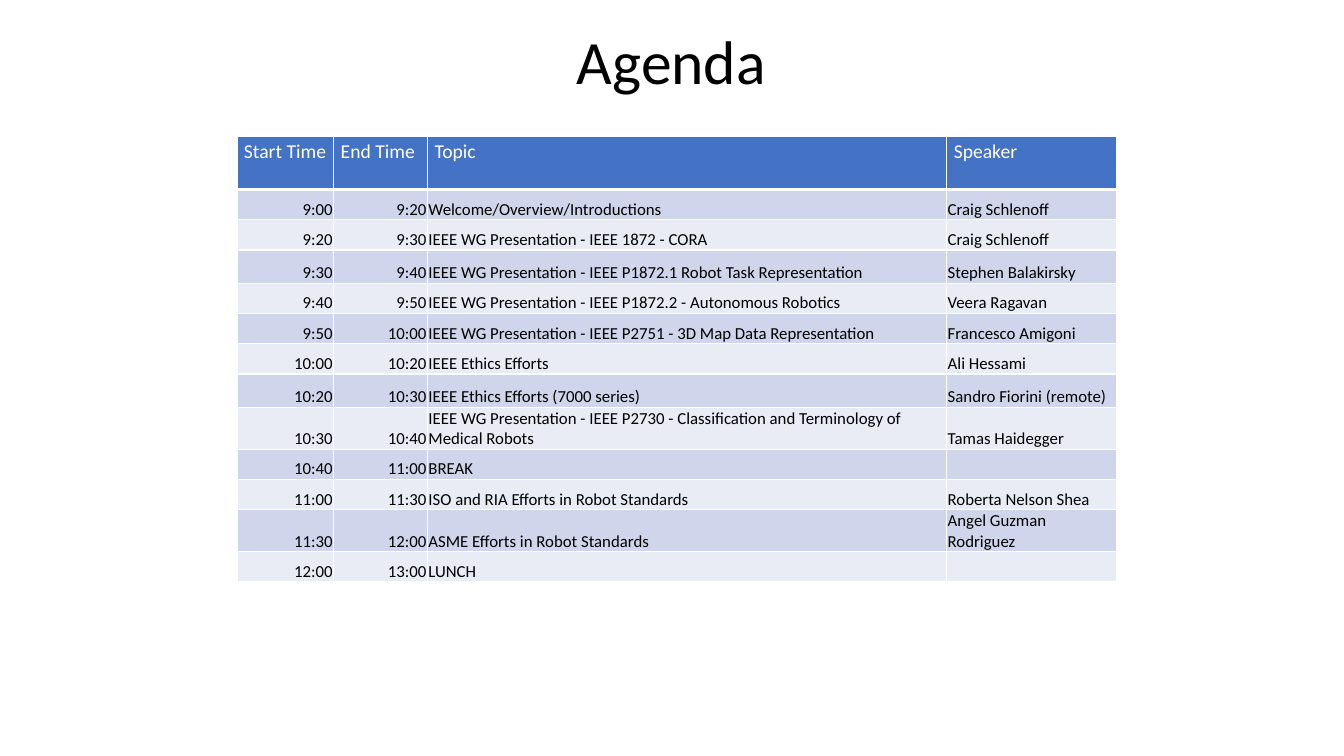
import pptx
import pptx.util
import pptx.oxml
import pptx.dml.color
import pptx.enum.text

Inches = pptx.util.Inches
Pt = pptx.util.Pt
RGBColor = pptx.dml.color.RGBColor
Align = pptx.enum.text.PP_ALIGN
Anchor = pptx.enum.text.MSO_ANCHOR

BLACK = RGBColor(0x00, 0x00, 0x00)
WHITE = RGBColor(0xFF, 0xFF, 0xFF)
BLUE = RGBColor(0x44, 0x72, 0xC4)
DARK = RGBColor(0xCF, 0xD5, 0xEA)
LIGHT = RGBColor(0xE9, 0xEB, 0xF5)
FONT = "Calibri"
NS = "http://schemas.openxmlformats.org/drawingml/2006/main"

# Columns, then each row with its height
WIDTHS = [0.96, 0.93, 5.15, 1.68]
ROWS = [
    (0.53, "Start Time", "End Time", "Topic", "Speaker"),
    (0.3, "9:00", "9:20", "Welcome/Overview/Introductions", "Craig Schlenoff"),
    (0.3, "9:20", "9:30", "IEEE WG Presentation - IEEE 1872 - CORA",
     "Craig Schlenoff"),
    (0.33, "9:30", "9:40",
     "IEEE WG Presentation - IEEE P1872.1 Robot Task Representation",
     "Stephen Balakirsky"),
    (0.3, "9:40", "9:50",
     "IEEE WG Presentation - IEEE P1872.2 - Autonomous Robotics",
     "Veera Ragavan"),
    (0.3, "9:50", "10:00",
     "IEEE WG Presentation - IEEE P2751 - 3D Map Data Representation",
     "Francesco Amigoni"),
    (0.3, "10:00", "10:20", "IEEE Ethics Efforts", "Ali Hessami"),
    (0.33, "10:20", "10:30", "IEEE Ethics Efforts (7000 series)",
     "Sandro Fiorini (remote)"),
    (0.41, "10:30", "10:40",
     "IEEE WG Presentation - IEEE P2730 - Classification and Terminology "
     "of Medical Robots", "Tamas Haidegger"),
    (0.3, "10:40", "11:00", "BREAK", ""),
    (0.3, "11:00", "11:30", "ISO and RIA Efforts in Robot Standards",
     "Roberta Nelson Shea"),
    (0.41, "11:30", "12:00", "ASME Efforts in Robot Standards",
     "Angel Guzman Rodriguez"),
    (0.3, "12:00", "13:00", "LUNCH", ""),
]


def style(para, size, color, align):
    para.alignment = align
    para.font.name = FONT
    para.font.size = Pt(size)
    para.font.color.rgb = color


def border(cell, base):
    props = cell._tc.get_or_add_tcPr()
    for side, width in (("L", 1), ("R", 1), ("T", 1), ("B", base)):
        props.append(pptx.oxml.parse_xml(
            f'<a:ln{side} xmlns:a="{NS}" w="{Pt(width)}"><a:solidFill>'
            f'<a:srgbClr val="{WHITE}"/></a:solidFill></a:ln{side}>'))


deck = pptx.Presentation()
deck.slide_width = Inches(13.33)
deck.slide_height = Inches(7.5)
slide = deck.slides.add_slide(deck.slide_layouts[5])

# Title
title = slide.shapes.title
title.left, title.top = Inches(2.35), Inches(0.29)
title.width, title.height = Inches(8.62), Inches(0.7)
title.text_frame.text = "Agenda"
title.text_frame.vertical_anchor = Anchor.MIDDLE
head = title.text_frame.paragraphs[0]
head.line_spacing = 0.9
style(head, 44, BLACK, Align.CENTER)

# Agenda table
table = slide.shapes.add_table(
    len(ROWS), len(WIDTHS), Inches(2.35), Inches(1.35),
    Inches(sum(WIDTHS)), Inches(sum(row[0] for row in ROWS))).table
table.first_row = False
table.horz_banding = False
for col, width in zip(table.columns, WIDTHS):
    col.width = Inches(width)

for r, (height, *texts) in enumerate(ROWS):
    table.rows[r].height = Inches(height)
    for c, text in enumerate(texts):
        cell = table.cell(r, c)
        cell.text = text
        para = cell.text_frame.paragraphs[0]
        border(cell, 3 if r == 0 else 1)
        cell.fill.solid()
        if r == 0:
            cell.fill.fore_color.rgb = BLUE
            cell.margin_left = cell.margin_right = Inches(0.07)
            cell.margin_top = cell.margin_bottom = Inches(0.04)
            style(para, 14, WHITE, Align.LEFT)
        else:
            cell.fill.fore_color.rgb = DARK if r % 2 else LIGHT
            cell.margin_left = cell.margin_right = Inches(0.01)
            cell.margin_top, cell.margin_bottom = Inches(0.01), 0
            cell.vertical_anchor = Anchor.BOTTOM
            style(para, 12, BLACK, Align.RIGHT if c < 2 else Align.LEFT)

deck.save("out.pptx")
